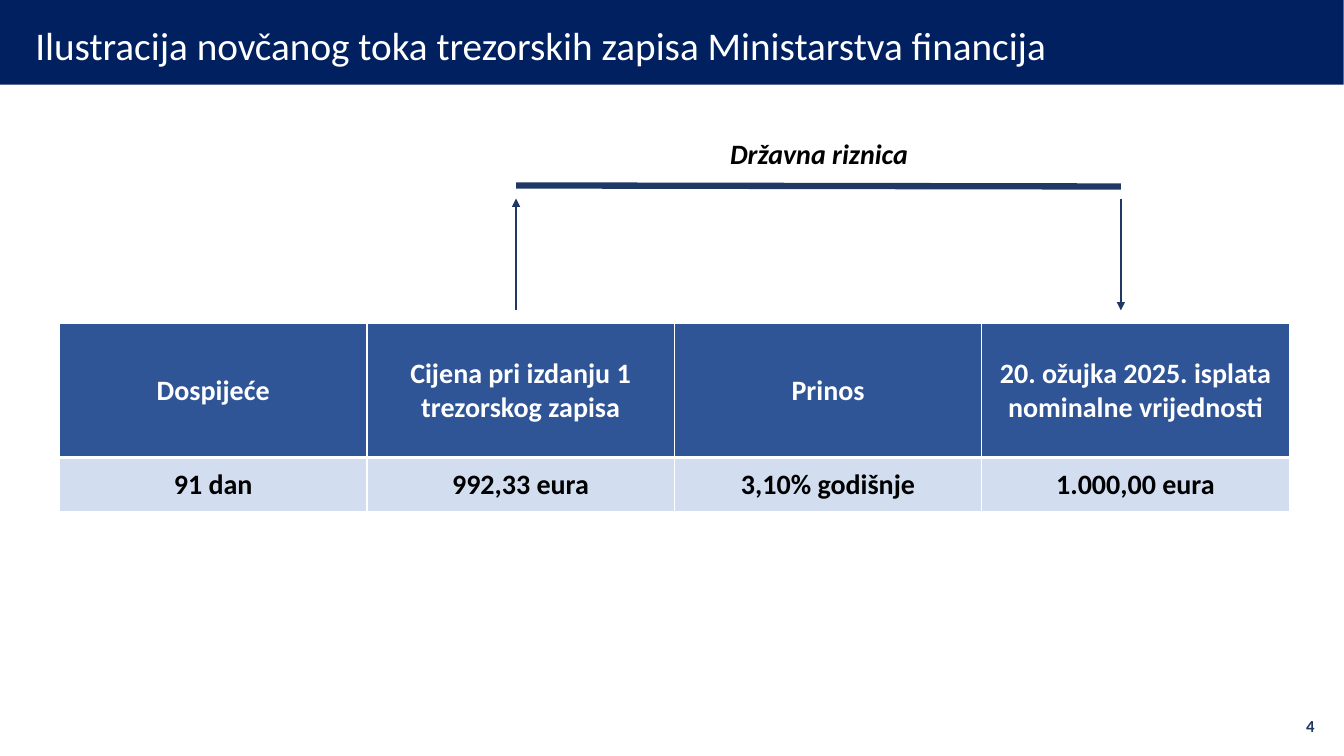
from dataclasses import dataclass

from lxml import etree
from pptx import Presentation
from pptx import util as u
from pptx.dml.color import RGBColor
from pptx.enum import shapes, text
from pptx.oxml.ns import qn

PX = u.Inches(1) // 100  # one px is a hundredth of an inch


@dataclass(frozen=True)
class Theme:
    font: str = "Calibri"
    bar: str = "002060"
    line: str = "203864"
    header: str = "2F5597"
    body: str = "D2DEEF"
    white: str = "FFFFFF"
    black: str = "000000"
    title_size: int = 28
    text_size: int = 20
    number_size: int = 12


THEME = Theme()


def px(*lengths):
    return [length * PX for length in lengths]


def write(frame, content, size=THEME.text_size, color=THEME.black, bold=False,
          italic=False, align=text.PP_ALIGN.CENTER, anchor=text.MSO_ANCHOR.MIDDLE,
          spacing=None):
    """Fill a text frame with one formatted paragraph; newlines become line breaks."""
    frame.word_wrap = True
    frame.vertical_anchor = anchor
    paragraph = frame.paragraphs[0]
    paragraph.alignment = align
    paragraph.line_spacing = spacing
    for index, line in enumerate(content.split("\n")):
        if index:
            paragraph.add_line_break()
        run = paragraph.add_run()
        run.text = line
        run.font.name = THEME.font
        run.font.size = u.Pt(size)
        run.font.bold = bold
        run.font.italic = italic
        run.font.color.rgb = RGBColor.from_string(color)


def add_title(slide, content):
    # Bar goes behind the title placeholder
    bar = slide.shapes.add_shape(shapes.MSO_SHAPE.RECTANGLE, *px(0, 0, 1333, 84))
    bar.shadow.inherit = False
    bar.fill.solid()
    bar.fill.fore_color.rgb = RGBColor.from_string(THEME.bar)
    bar.line.fill.background()
    title = slide.shapes.title
    title._element.addprevious(bar._element)
    title.left, title.top, title.width, title.height = px(25, 12, 1150, 71)
    write(title.text_frame, content, size=THEME.title_size, color=THEME.white,
          align=text.PP_ALIGN.LEFT, spacing=0.9)


def add_label(slide, box, content, **style):
    label = slide.shapes.add_textbox(*px(*box))
    write(label.text_frame, content, bold=True, **style)


def add_line(slide, start, end, width, arrow=False):
    line = slide.shapes.add_connector(shapes.MSO_CONNECTOR.STRAIGHT, *px(*start, *end))
    line.line.color.rgb = RGBColor.from_string(THEME.line)
    line.line.width = u.Pt(width)
    if arrow:
        etree.SubElement(line.line._get_or_add_ln(), qn("a:tailEnd"), type="triangle")
    etree.SubElement(line._element.spPr, qn("a:effectLst"))


def add_border(cell, side, width):
    border = etree.SubElement(cell._tc.get_or_add_tcPr(), qn(f"a:ln{side}"),
                              w=str(u.Pt(width)))
    fill = etree.SubElement(border, qn("a:solidFill"))
    etree.SubElement(fill, qn("a:srgbClr"), val=THEME.white)


def add_table(slide, box, row_heights, rows):
    table = slide.shapes.add_table(len(rows), len(rows[0]), *px(*box)).table
    for row, height in zip(table.rows, row_heights):
        row.height = height * PX
    for row_index, values in enumerate(rows):
        is_header = row_index == 0
        for column_index, value in enumerate(values):
            cell = table.cell(row_index, column_index)
            # A thick rule separates the header from the values
            widths = {"L": 1, "R": 1, "T": 1 if is_header else 3, "B": 3 if is_header else 1}
            for side, width in widths.items():
                add_border(cell, side, width)
            cell.fill.solid()
            cell.fill.fore_color.rgb = RGBColor.from_string(
                THEME.header if is_header else THEME.body)
            cell.vertical_anchor = text.MSO_ANCHOR.MIDDLE
            write(cell.text_frame, value, bold=True,
                  color=THEME.white if is_header else THEME.black)


def main():
    presentation = Presentation()
    presentation.slide_width, presentation.slide_height = u.Inches(13.333), u.Inches(7.5)
    slide = presentation.slides.add_slide(presentation.slide_layouts[5])

    # Title and slide number
    add_title(slide, "Ilustracija novčanog toka trezorskih zapisa Ministarstva financija")
    add_label(slide, (1270, 700, 44, 40), "4", size=THEME.number_size,
              color=THEME.line, align=text.PP_ALIGN.RIGHT)

    # Treasury bill terms
    add_table(slide, (59, 321, 1220, 187), (133, 54), [
        ["Dospijeće", "Cijena pri izdanju 1 trezorskog zapisa", "Prinos",
         "20. ožujka 2025. isplata\nnominalne vrijednosti"],
        ["91 dan", "992,33 eura", "3,10% godišnje", "1.000,00 eura"],
    ])

    # Cash flow into and out of the treasury
    issue, payout = 512, 1112
    treasury, top, bottom = 184, 197, 308
    add_line(slide, (issue, treasury), (payout, treasury + 1), 4.5)
    add_line(slide, (issue, bottom), (issue, top), 1.5, arrow=True)
    add_line(slide, (payout, top), (payout, bottom), 1.5, arrow=True)
    add_label(slide, (564, 131, 497, 44), "Državna riznica", italic=True,
              anchor=text.MSO_ANCHOR.TOP)

    presentation.save("out.pptx")


if __name__ == "__main__":
    main()
